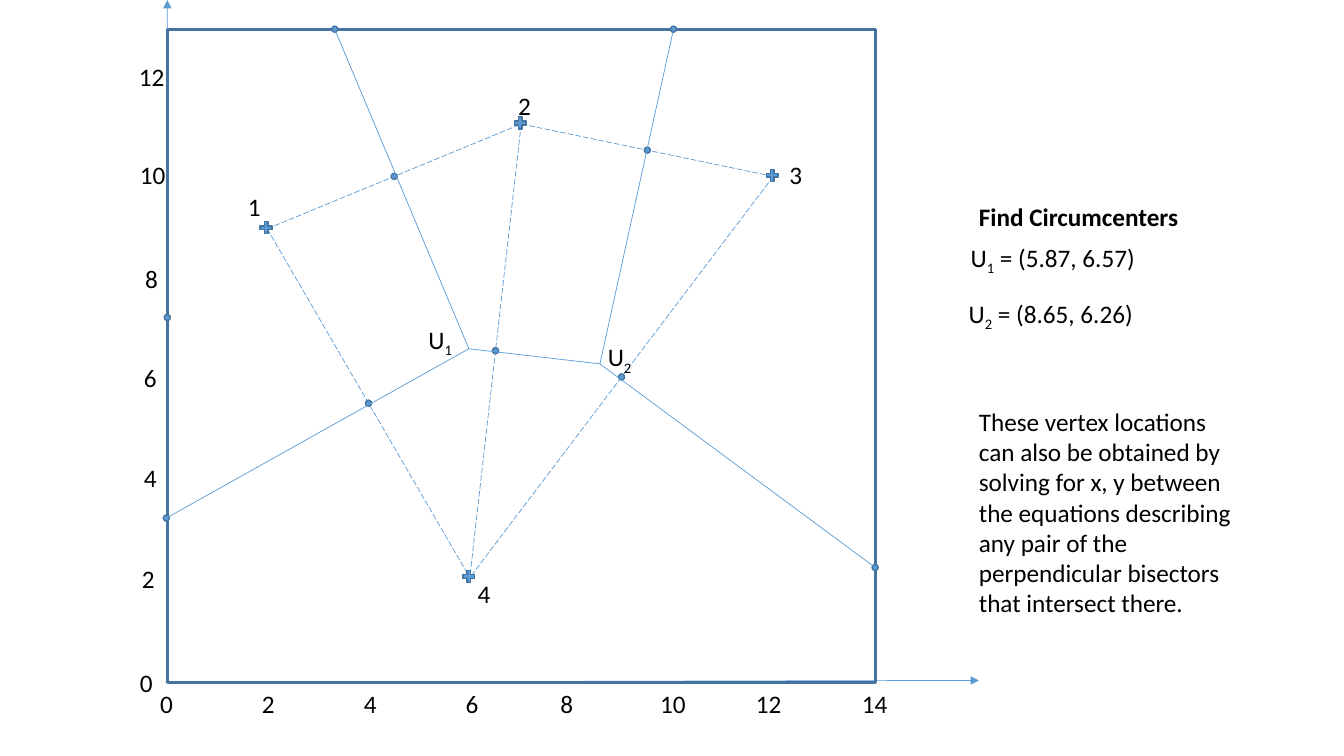
from itertools import chain

from lxml.etree import SubElement
from pptx import Presentation
from pptx.dml.color import RGBColor
from pptx.enum.dml import MSO_LINE
from pptx.enum.shapes import MSO_CONNECTOR, MSO_SHAPE
from pptx.enum.text import MSO_AUTO_SIZE
from pptx.oxml.ns import qn
from pptx.util import Inches, Pt


def color(value):
    return RGBColor.from_string(value)


def write(p, text, size=18, font="Calibri", fill="000000", bold=False, sub=False):
    r = p.add_run()
    r.text = text
    r.font.size, r.font.name, r.font.bold = Pt(size), font, bold
    r.font.color.rgb = color(fill)
    if sub:
        r.font._element.set("baseline", "-25000")


class Diagram:
    blue, outline = "5B9BD5", "43739E"

    def __init__(self, slide):
        self.slide = slide
        self.shapes = slide.shapes

    def start_group(self):
        self.shapes = self.slide.shapes.add_group_shape().shapes

    def end_group(self):
        self.shapes = self.slide.shapes

    def line(self, start, end, dashed=False, arrow=False):
        c = self.shapes.add_connector(
            MSO_CONNECTOR.STRAIGHT, *(Inches(v) for v in (*start, *end)))
        c.line.color.rgb = color(self.blue)
        c.line.width = Pt(0.5)
        if dashed:
            c.line.dash_style = MSO_LINE.LONG_DASH
        if arrow:
            SubElement(c.line._get_or_add_ln(), qn("a:tailEnd"), type="triangle")
        SubElement(c._element.spPr, qn("a:effectLst"))

    def shape(self, kind, x, y, w, h, fill=None, weight=1):
        sp = self.shapes.add_shape(kind, *(Inches(v) for v in (x, y, w, h)))
        sp.shadow.inherit = False
        if fill:
            sp.fill.solid()
            sp.fill.fore_color.rgb = color(fill)
        else:
            sp.fill.background()
        sp.line.color.rgb = color(self.outline)
        sp.line.width = Pt(weight)

    def marker(self, kind, center, size):
        x, y = center
        self.shape(kind, x - size / 2, y - size / 2, size, size, self.blue)

    def text(self, x, y, w, text, sub="", rest="", h=0.4, wrap=False, bold=False):
        sp = self.shapes.add_textbox(*(Inches(v) for v in (x, y, w, h)))
        tf = sp.text_frame
        tf.word_wrap = wrap
        tf.auto_size = MSO_AUTO_SIZE.SHAPE_TO_FIT_TEXT
        p = tf.paragraphs[0]
        write(p, text, bold=bold)
        if sub:
            write(p, sub, sub=True)
        if rest:
            write(p, rest)


def label_width(value):
    return 0.33 if value < 10 else 0.46


def main():
    prs = Presentation()
    prs.slide_width, prs.slide_height = Inches(13.33), Inches(7.5)
    s = Diagram(prs.slides.add_slide(prs.slide_layouts[6]))

    # Axes with tick labels every two units
    s.line((1.65, 6.77), (1.66, 0), arrow=True)
    s.line((1.64, 6.77), (9.71, 6.75), arrow=True)
    x_lefts = [1.49, 2.5, 3.51, 4.52, 5.46, 6.45, 7.4, 8.45]
    for i, x in enumerate(x_lefts):
        s.text(x, 6.78, label_width(2 * i), str(2 * i))
    y_corners = [(1.29, 6.57), (1.31, 5.54), (1.33, 4.54), (1.33, 3.55),
                 (1.34, 2.56), (1.29, 1.53), (1.28, 0.56)]
    for i, (x, y) in enumerate(y_corners):
        s.text(x, y, label_width(2 * i), str(2 * i))

    # Bounding frame
    s.shape(MSO_SHAPE.RECTANGLE, 1.66, 0.29, 7.02, 6.48, weight=2.25)

    # Triangulation of the four sites
    sites = {1: (2.65, 2.27), 2: (5.17, 1.23), 3: (7.67, 1.75), 4: (4.66, 5.73)}
    site_labels = {1: (2.36, 1.85), 2: (5.04, 0.85), 3: (7.73, 1.53), 4: (4.64, 5.69)}
    edges = [(1, 2), (1, 4), (3, 4), (3, 2), (2, 4)]
    s.start_group()
    for a, b in edges:
        s.line(sites[a], sites[b], dashed=True)
    for number, (x, y) in sites.items():
        s.marker(MSO_SHAPE.MATH_PLUS, (x - 0.01, y - 0.01), 0.16)
        s.text(*site_labels[number], 0.33, str(number))
    s.end_group()

    # Dots at edge midpoints and on the frame
    midpoints = [[(m + n) / 2 for m, n in zip(sites[a], sites[b])] for a, b in edges]
    border = [(3.32, 0.29), (6.68, 0.29), (8.68, 5.63), (1.65, 5.14), (1.66, 3.15)]
    for point in chain(midpoints, border):
        s.marker(MSO_SHAPE.OVAL, point, 0.06)

    # Perpendicular bisectors meeting at the circumcenters
    u1, u2 = (4.65, 3.46), (5.95, 3.61)
    top_left, top_right, right, left = border[:4]
    for start, end in [(top_left, u1), (left, u1), (u1, u2), (top_right, u2), (u2, right)]:
        s.line(start, end)
    s.text(4.15, 3.17, 0.45, "U", "1")
    s.text(5.93, 3.34, 0.45, "U", "2")

    # Explanation on the right
    s.text(9.61, 1.95, 2.19, "Find Circumcenters", bold=True)
    s.text(9.53, 2.35, 1.86, "U", "1", " = (5.87, 6.57)")
    s.text(9.51, 2.91, 1.86, "U", "2", " = (8.65, 6.26)")
    s.text(9.61, 3.98, 2.85,
           "These vertex locations can also be obtained by solving for x, y between "
           "the equations describing any pair of the perpendicular bisectors that "
           "intersect there.", h=2.22, wrap=True)

    prs.save("out.pptx")


if __name__ == "__main__":
    main()
